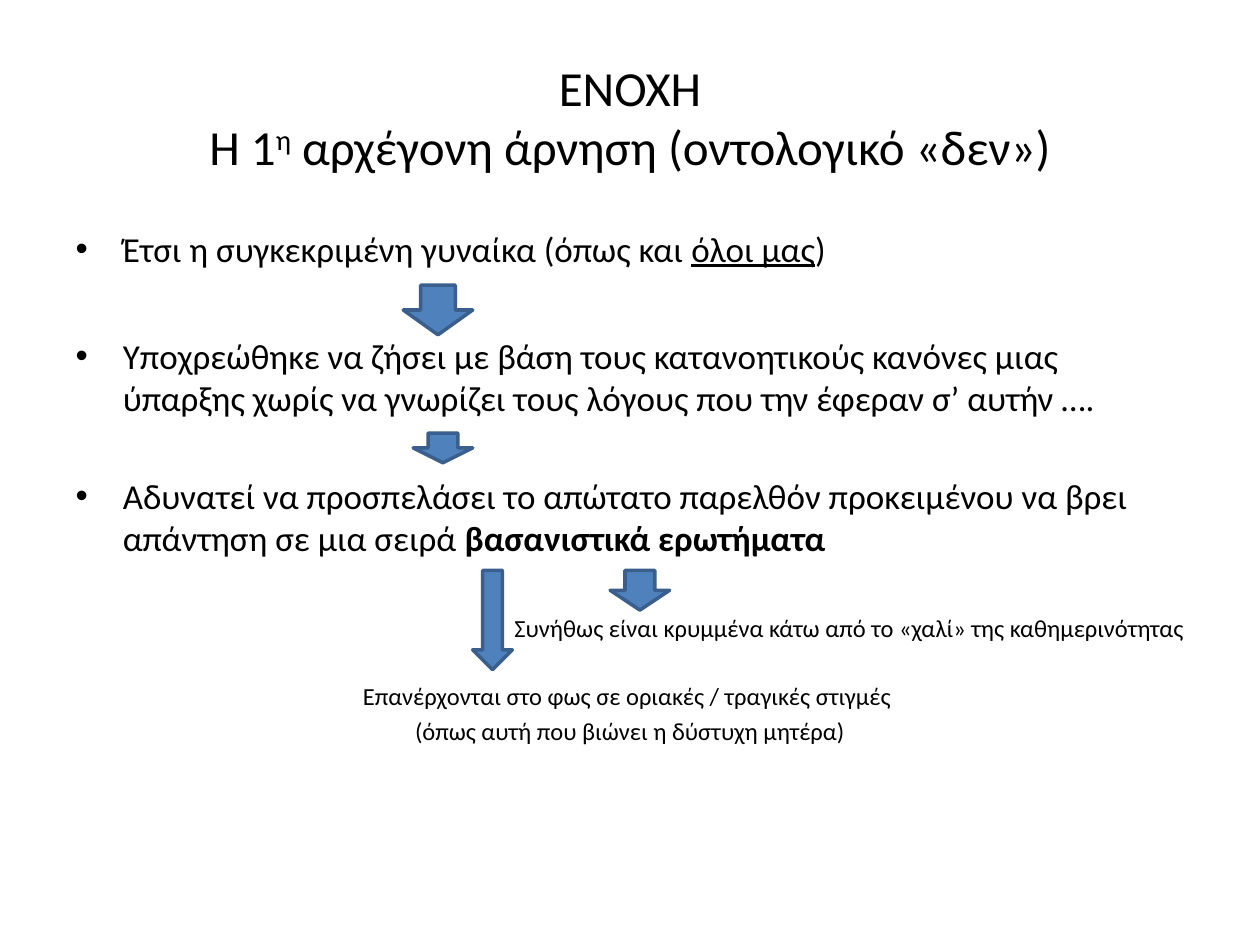
import dataclasses

import lxml.etree
import pptx
import pptx.dml.color
import pptx.enum.shapes
import pptx.enum.text
import pptx.oxml.ns
import pptx.util

Cm = pptx.util.Cm
Pt = pptx.util.Pt
Align = pptx.enum.text.PP_ALIGN


@dataclasses.dataclass(frozen=True)
class Theme:
    font: str = "Calibri"
    ink: str = "000000"
    fill: str = "4F81BD"
    edge: str = "3A5F8C"
    head: int = 28
    body: int = 20
    note: int = 14
    line: int = 2


class Deck:
    """Holds the style and the current slide."""

    def __init__(self, theme):
        self.theme = theme
        self.file = pptx.Presentation()
        self.file.slide_width = Cm(25.4)
        self.file.slide_height = Cm(19.05)
        self.slide = self.file.slides.add_slide(self.file.slide_layouts[1])

    def color(self, code):
        return pptx.dml.color.RGBColor.from_string(code)

    def place(self, shape, left, top, width, height):
        shape.left, shape.top = Cm(left), Cm(top)
        shape.width, shape.height = Cm(width), Cm(height)
        frame = shape.text_frame
        frame.word_wrap = True
        frame.auto_size = pptx.enum.text.MSO_AUTO_SIZE.NONE
        return frame

    def run(self, para, text, size, bold=False, under=False, raised=False):
        run = para.add_run()
        run.text = text
        font = run.font
        font.name, font.size = self.theme.font, Pt(size)
        font.bold, font.underline = bold, under
        font.color.rgb = self.color(self.theme.ink)
        if raised:
            run._r.get_or_add_rPr().set("baseline", "30000")

    def title(self, box, lines):
        frame = self.place(self.slide.shapes.title, *box)
        frame.vertical_anchor = pptx.enum.text.MSO_ANCHOR.MIDDLE
        para = frame.paragraphs[0]
        para.alignment = Align.CENTER
        for i, runs in enumerate(lines):
            if i:
                para.add_line_break()
            for text, style in runs:
                self.run(para, text, self.theme.head, **style)

    def body(self, box, points, notes):
        frame = self.place(self.slide.placeholders[1], *box)
        for i, (gap, runs) in enumerate(points):
            para = frame.add_paragraph() if i else frame.paragraphs[0]
            para.space_before = Pt(gap)
            for text, style in runs:
                self.run(para, text, self.theme.body, **style)
        for gap, align, text in notes:
            para = frame.add_paragraph()
            para.alignment = align
            para.space_before = Pt(gap)
            lxml.etree.SubElement(para._p.get_or_add_pPr(),
                                  pptx.oxml.ns.qn("a:buNone"))
            self.run(para, text, self.theme.note)

    def arrow(self, left, top, width, height):
        kind = pptx.enum.shapes.MSO_SHAPE.DOWN_ARROW
        shape = self.slide.shapes.add_shape(
            kind, Cm(left), Cm(top), Cm(width), Cm(height))
        shape.shadow.inherit = False
        shape.fill.solid()
        shape.fill.fore_color.rgb = self.color(self.theme.fill)
        shape.line.color.rgb = self.color(self.theme.edge)
        shape.line.width = Pt(self.theme.line)


def main():
    deck = Deck(Theme())

    # Title in two lines
    deck.title((1.27, 0.76, 22.86, 3.18), [
        [("ΕΝΟΧΗ", {})],
        [("Η 1", {}), ("η", {"raised": True}),
         (" αρχέγονη άρνηση (οντολογικό «δεν»)", {})],
    ])

    # Bulleted points, then the notes under the arrows
    points = [
        (0, [("Έτσι η συγκεκριμένη γυναίκα (όπως και ", {}),
             ("όλοι μας", {"under": True}), (")", {})]),
        (37.5, [("Υποχρεώθηκε να ζήσει με βάση τους κατανοητικούς κανόνες "
                 "μιας ύπαρξης χωρίς να γνωρίζει τους λόγους που την έφεραν "
                 "σ’ αυτήν ….", {})]),
        (32, [("Αδυνατεί να προσπελάσει το απώτατο παρελθόν προκειμένου να "
               "βρει απάντηση σε μια σειρά ", {}),
              ("βασανιστικά ερωτήματα", {"bold": True})]),
    ]
    notes = [
        (31, Align.RIGHT,
         "Συνήθως είναι κρυμμένα κάτω από το «χαλί» της καθημερινότητας"),
        (22, Align.CENTER,
         "Επανέρχονται στο φως σε οριακές / τραγικές στιγμές "),
        (3, Align.CENTER, "(όπως αυτή που βιώνει η δύστυχη μητέρα)"),
    ]
    deck.body((1.27, 4.45, 22.86, 12.57), points, notes)

    # Arrows between the points and down to the notes
    for box in [(8.13, 5.75, 1.4, 1), (8.33, 8.73, 1.2, 0.6),
                (12.3, 11.5, 1.2, 0.8), (9.53, 11.5, 0.8, 2)]:
        deck.arrow(*box)

    deck.file.save("out.pptx")


if __name__ == "__main__":
    main()
